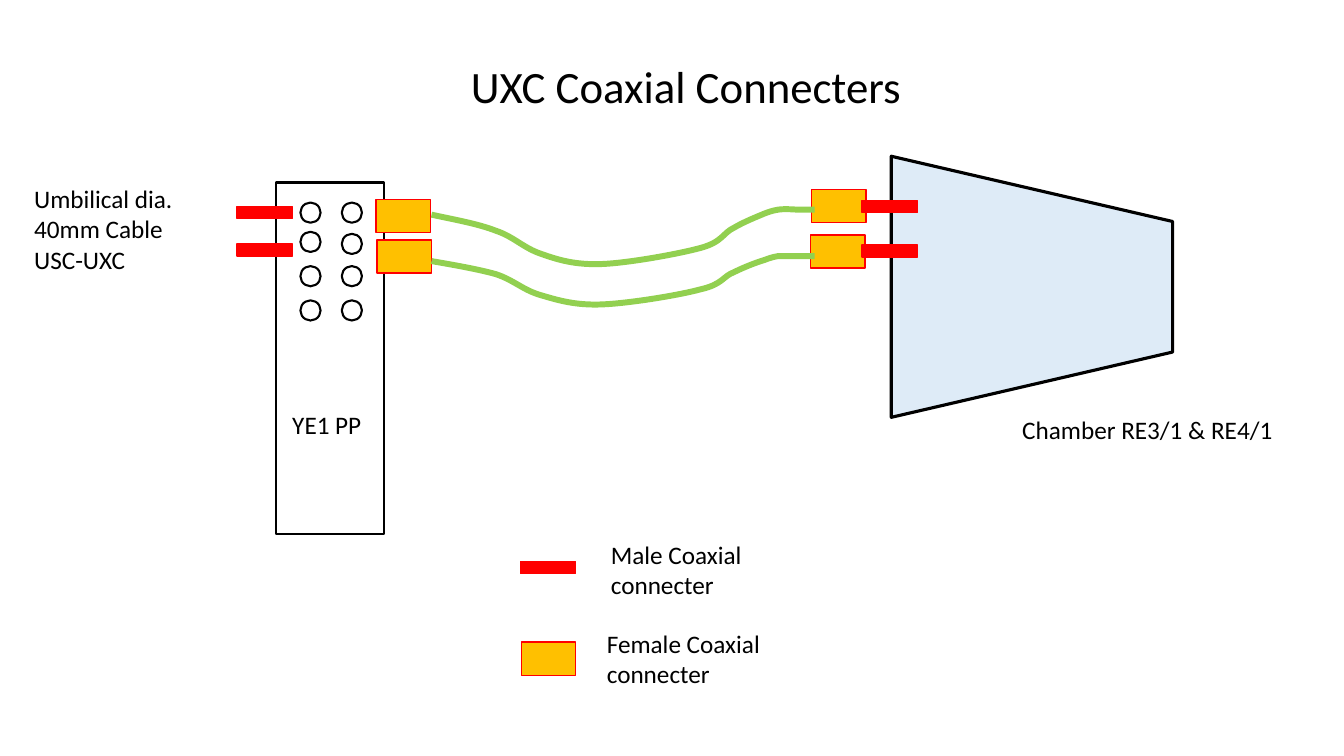
from lxml.etree import SubElement
from pptx import Presentation
from pptx.dml.color import RGBColor
from pptx.enum.shapes import MSO_SHAPE
from pptx.enum.text import MSO_ANCHOR, MSO_AUTO_SIZE, PP_ALIGN
from pptx.oxml.ns import qn
from pptx.util import Inches, Pt

BLACK, RED, AMBER, GREEN, PALE_BLUE = "000000", "FF0000", "FFC000", "92D050", "DEEBF7"
MALE_SIZE = (0.55, 0.12)
FEMALE_SIZE = (0.54, 0.33)
HOLE_SIZE = (0.2, 0.2)

# A start point, eight Bezier curves of three points each, and a straight end
CABLE_X = [4.28, 4.51, 4.74, 4.92, 5.1, 5.19, 5.37, 5.54, 5.71, 5.97, 6.23, 6.73, 6.95,
           7.17, 7.17, 7.28, 7.38, 7.51, 7.58, 7.66, 7.67, 7.72, 7.78, 7.9, 7.9, 8.08]
UPPER_CABLE_Y = [2.13, 2.18, 2.22, 2.29, 2.35, 2.46, 2.52, 2.58, 2.63, 2.62, 2.61, 2.52, 2.46,
                 2.4, 2.31, 2.26, 2.2, 2.15, 2.12, 2.09, 2.09, 2.08, 2.07, 2.08, 2.08, 2.08]
LOWER_CABLE_Y = [2.59, 2.63, 2.67, 2.72, 2.78, 2.88, 2.93, 2.98, 3.03, 3.02, 3.01, 2.93, 2.87,
                 2.82, 2.74, 2.7, 2.65, 2.6, 2.58, 2.55, 2.55, 2.54, 2.54, 2.54, 2.54, 2.54]


def color(hex_value):
    return RGBColor.from_string(hex_value)


class Diagram:
    font_name = "Calibri"
    label_size = 18
    title_size = 32

    def __init__(self, presentation):
        self.slide = presentation.slides.add_slide(presentation.slide_layouts[5])

    def place(self, shape, box):
        for side, length in zip(("left", "top", "width", "height"), box):
            setattr(shape, side, Inches(length))

    def paint(self, shape, fill, line, weight):
        shape.shadow.inherit = False
        if fill:
            shape.fill.solid()
            shape.fill.fore_color.rgb = color(fill)
        else:
            shape.fill.background()
        shape.line.color.rgb = color(line)
        shape.line.width = Pt(weight)

    def set_text(self, shape, text, size):
        frame = shape.text_frame
        frame.text = text
        frame_format = {"word_wrap": True, "vertical_anchor": MSO_ANCHOR.TOP,
                        "auto_size": MSO_AUTO_SIZE.SHAPE_TO_FIT_TEXT}
        for name, value in frame_format.items():
            setattr(frame, name, value)
        paragraph = frame.paragraphs[0]
        paragraph.alignment = PP_ALIGN.LEFT
        font = paragraph.runs[0].font
        for name, value in {"name": self.font_name, "size": Pt(size)}.items():
            setattr(font, name, value)
        font.color.rgb = color(BLACK)

    def title(self, text, box):
        heading = self.slide.shapes.title
        self.place(heading, box)
        self.set_text(heading, text, self.title_size)

    def label(self, text, box):
        caption = self.slide.shapes.add_textbox(*map(Inches, box))
        self.set_text(caption, text, self.label_size)

    def shape(self, kind, box, fill=None, line=BLACK, weight=1.0):
        figure = self.slide.shapes.add_shape(kind, *map(Inches, box))
        self.paint(figure, fill, line, weight)
        return figure

    def male(self, left, top):
        self.shape(MSO_SHAPE.RECTANGLE, (left, top, *MALE_SIZE), RED, RED)

    def female(self, left, top):
        self.shape(MSO_SHAPE.RECTANGLE, (left, top, *FEMALE_SIZE), AMBER, RED)

    def cable(self, heights):
        """Draw a curve by joining every three points into one Bezier segment."""
        points = [(Inches(x), Inches(y)) for x, y in zip(CABLE_X, heights)]
        builder = self.slide.shapes.build_freeform(*points[0])
        builder.add_line_segments(points[1:], close=False)
        wire = builder.convert_to_shape()
        self.paint(wire, None, GREEN, 4.25)
        outline = next(wire._element.iter(qn("a:path")))
        segments = outline.findall(qn("a:lnTo"))
        for start in range(0, len(segments) - 1, 3):
            curve = SubElement(outline, qn("a:cubicBezTo"))
            for segment in segments[start:start + 3]:
                curve.append(segment[0])
                outline.remove(segment)
        outline.append(segments[-1])


def main():
    presentation = Presentation()
    presentation.slide_width = Inches(13.33)
    presentation.slide_height = Inches(7.5)
    diagram = Diagram(presentation)

    diagram.title("UXC Coaxial Connecters", (4.57, 0.53, 5.47, 0.64))

    chamber = diagram.shape(MSO_SHAPE.TRAPEZOID, (8.94, 1.45, 2.59, 2.79), PALE_BLUE, weight=2.25)
    chamber.rotation = 90
    diagram.shape(MSO_SHAPE.RECTANGLE, (2.74, 1.81, 1.07, 3.49), weight=1.75)
    for left, tops in ((2.98, (2.01, 2.3, 2.64, 2.98)), (3.39, (2.01, 2.32, 2.64, 2.98))):
        for top in tops:
            diagram.shape(MSO_SHAPE.OVAL, (left, top, *HOLE_SIZE), weight=1.5)

    for left, top in ((3.74, 2.38), (3.73, 1.98), (8.04, 2.33), (8.05, 1.88), (5.17, 6.37)):
        diagram.female(left, top)
    for left, top in ((2.35, 2.05), (2.35, 2.42), (8.55, 1.99), (8.55, 2.43), (5.16, 5.57)):
        diagram.male(left, top)
    for heights in (UPPER_CABLE_Y, LOWER_CABLE_Y):
        diagram.cable(heights)

    for text, box in (
        ("Umbilical dia. 40mm Cable USC-UXC", (0.24, 1.77, 1.65, 1.01)),
        ("YE1 PP", (2.8, 4.01, 1.28, 0.4)),
        ("Chamber RE3/1 & RE4/1", (10.04, 4.06, 2.97, 0.4)),
        ("Male Coaxial connecter", (5.96, 5.3, 1.91, 0.71)),
        ("Female Coaxial connecter", (5.92, 6.18, 1.91, 0.71)),
    ):
        diagram.label(text, box)

    presentation.save("out.pptx")


if __name__ == "__main__":
    main()
